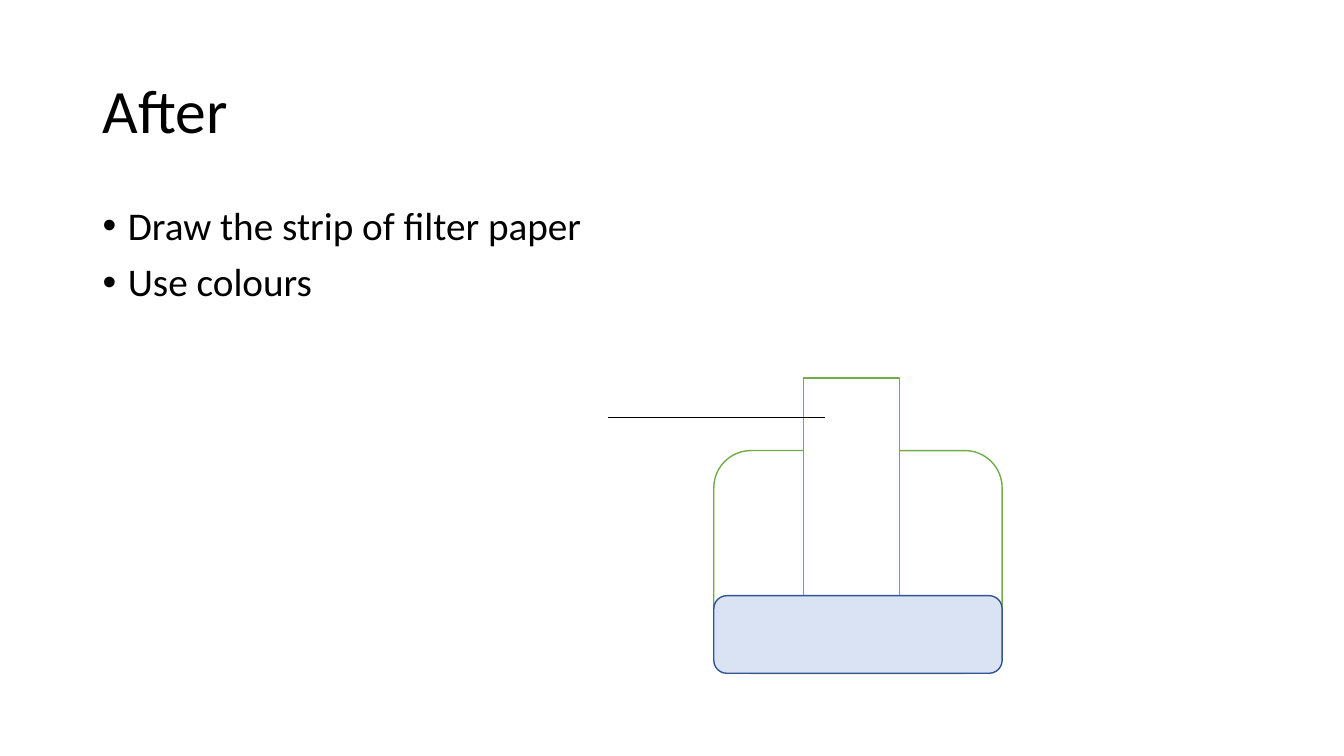
from dataclasses import dataclass

from lxml import etree
from pptx import Presentation
from pptx.dml.color import RGBColor
from pptx.enum.shapes import MSO_CONNECTOR, MSO_SHAPE
from pptx.enum.text import MSO_ANCHOR
from pptx.oxml.ns import qn
from pptx.util import Pt

ROUNDED = MSO_SHAPE.ROUNDED_RECTANGLE
RECTANGLE = MSO_SHAPE.RECTANGLE
STRAIGHT = MSO_CONNECTOR.STRAIGHT
TOP, MIDDLE = MSO_ANCHOR.TOP, MSO_ANCHOR.MIDDLE


@dataclass(frozen=True)
class Theme:
    font: str = "Calibri"
    title_size: int = 44
    body_size: int = 28
    text: str = "000000"
    paper: str = "FFFFFF"
    glass_line: str = "70AD47"
    water: str = "DAE3F3"
    water_line: str = "325491"
    outline: float = 1
    label_line: float = 0.5


THEME = Theme()
EMU_PER_PX = 9144  # 100 px to the inch
SLIDE_SIZE = (1333, 750)

TITLE = "After"
INSTRUCTIONS = ["Draw the strip of filter paper", "Use colours"]

# Boxes are left, top, width, height in px
TITLE_BOX = (92, 40, 1150, 145)
BODY_BOX = (92, 200, 1150, 476)
BULLET_INDENT = 25

BEAKER = (708, 447, 286, 221)
STRIP = (797, 375, 95, 221)
WATER_HEIGHT = 77
LABEL_LINE = (603, 414, 818, 414)


def px(*lengths):
    return [length * EMU_PER_PX for length in lengths]


def add_text(slide, box, lines, size, anchor):
    frame = slide.shapes.add_textbox(*px(*box)).text_frame
    frame.word_wrap = True
    frame.vertical_anchor = anchor
    frame.text = "\n".join(lines)
    for paragraph in frame.paragraphs:
        paragraph.line_spacing = 0.9
        font = paragraph.runs[0].font
        font.name = THEME.font
        font.size = Pt(size)
        font.color.rgb = RGBColor.from_string(THEME.text)
    return frame


def add_bullet(paragraph):
    paragraph.space_before = Pt(10)
    properties = paragraph._p.get_or_add_pPr()
    indent, = px(BULLET_INDENT)
    properties.set("marL", str(indent))
    properties.set("indent", str(-indent))
    etree.SubElement(properties, qn("a:buFont")).set("typeface", "Arial")
    etree.SubElement(properties, qn("a:buChar")).set("char", "•")


def add_part(group, kind, box, fill, line):
    shape = group.shapes.add_shape(kind, *px(*box))
    shape.shadow.inherit = False
    shape.fill.solid()
    shape.fill.fore_color.rgb = RGBColor.from_string(fill)
    shape.line.color.rgb = RGBColor.from_string(line)
    shape.line.width = Pt(THEME.outline)


def add_apparatus(slide):
    left, top, width, height = BEAKER
    water = (left, top + height - WATER_HEIGHT, width, WATER_HEIGHT)
    group = slide.shapes.add_group_shape()
    add_part(group, ROUNDED, BEAKER, THEME.paper, THEME.glass_line)
    add_part(group, RECTANGLE, STRIP, THEME.paper, THEME.glass_line)
    add_part(group, ROUNDED, water, THEME.water, THEME.water_line)

    label_line = group.shapes.add_connector(STRAIGHT, *px(*LABEL_LINE))
    label_line.line.color.rgb = RGBColor.from_string(THEME.text)
    label_line.line.width = Pt(THEME.label_line)
    etree.SubElement(label_line._element.spPr, qn("a:effectLst"))


def main():
    presentation = Presentation()
    presentation.slide_width, presentation.slide_height = px(*SLIDE_SIZE)
    slide = presentation.slides.add_slide(presentation.slide_layouts[6])
    add_text(slide, TITLE_BOX, [TITLE], THEME.title_size, MIDDLE)
    body = add_text(slide, BODY_BOX, INSTRUCTIONS, THEME.body_size, TOP)
    for paragraph in body.paragraphs:
        add_bullet(paragraph)
    add_apparatus(slide)
    presentation.save("out.pptx")


if __name__ == "__main__":
    main()
